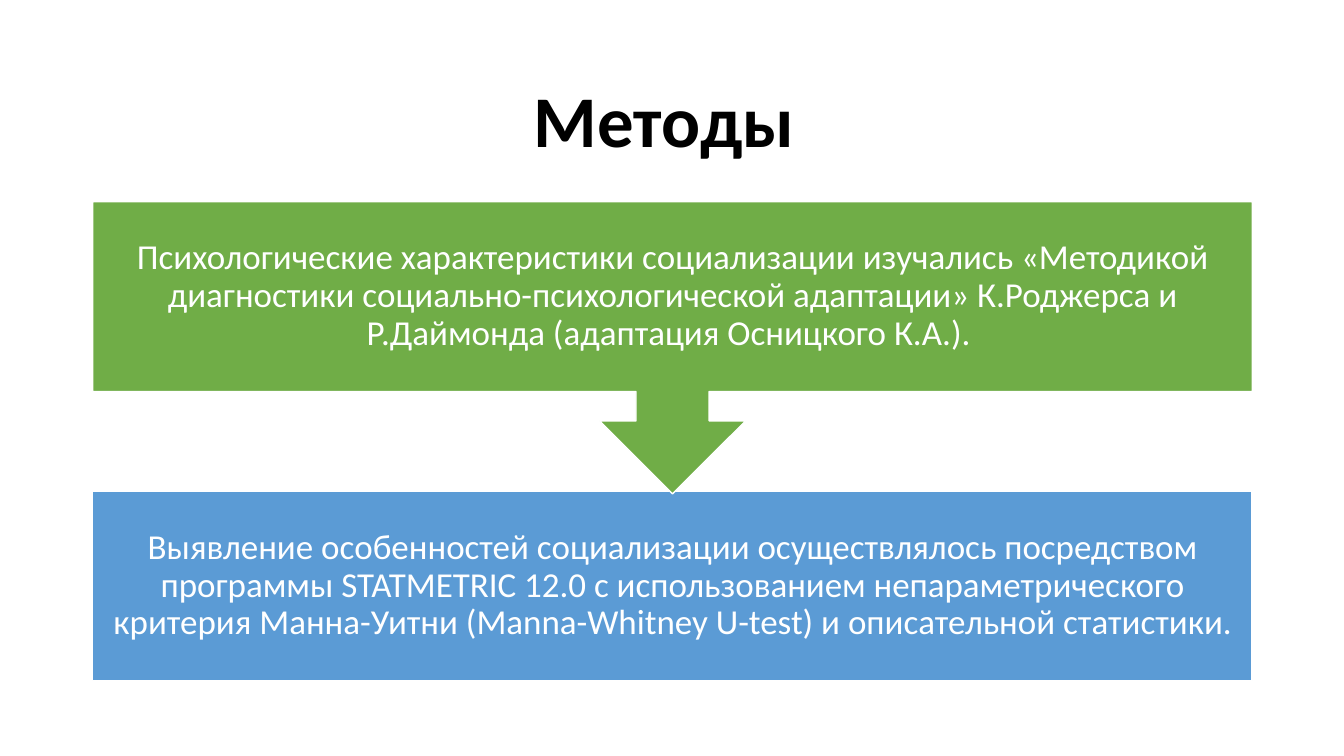
from pptx import Presentation
from pptx.dml.color import RGBColor
from pptx.enum import shapes, text
from pptx.util import Inches, Pt

WHITE = RGBColor(0xFF, 0xFF, 0xFF)
BLACK = RGBColor(0, 0, 0)
BLUE = RGBColor(0x5B, 0x9B, 0xD5)
GREEN = RGBColor(0x70, 0xAD, 0x47)

TITLE = "Методы "
STUDY = ("Психологические характеристики социализации изучались «Методикой "
         "диагностики социально-психологической адаптации» К.Роджерса и "
         "Р.Даймонда (адаптация Осницкого К.А.). ")
STATS = ("Выявление особенностей социализации осуществлялось посредством "
         "программы STATMETRIC 12.0 с использованием непараметрического "
         "критерия Манна-Уитни (Manna-Whitney U-test) и описательной статистики.")

LEFT, WIDE, TALL = 0.92, 11.5, 1.88
TOP, NEXT = 2, 4.87
ARROW = 2.9  # height of the callout with its arrow

HEAD = {"size": Pt(52), "bold": True, "name": "Calibri"}
BODY = {"size": Pt(25), "name": "Calibri"}

# text, top, height, inset, colour, font
LABELS = [
    (TITLE, 0.61, 1.24, 0.1, BLACK, HEAD),
    (STATS, NEXT, TALL, 0.19, WHITE, BODY),
    (STUDY, TOP, TALL, 0.19, WHITE, BODY),
]
# preset, top, height, turn, fill
KIND = shapes.MSO_SHAPE
BLOCKS = [
    (KIND.RECTANGLE, NEXT, TALL, 0, BLUE),
    (KIND.UP_ARROW_CALLOUT, TOP, ARROW, 180, GREEN),
]


def place(top, tall):
    return [Inches(n) for n in (LEFT, top, WIDE, tall)]


def block(slide, kind, top, tall, turn, fill):
    shape = slide.shapes.add_shape(kind, *place(top, tall))
    shape.rotation = turn
    shape.shadow.inherit = False
    shape.fill.solid()
    shape.fill.fore_color.rgb = fill
    shape.line.color.rgb = WHITE
    shape.line.width = Pt(1)


def label(slide, words, top, tall, inset, ink, font):
    frame = slide.shapes.add_textbox(*place(top, tall)).text_frame
    frame.word_wrap = True
    frame.vertical_anchor = text.MSO_ANCHOR.MIDDLE
    for side in ("left", "top", "right", "bottom"):
        setattr(frame, "margin_" + side, Inches(inset))
    para = frame.paragraphs[0]
    para.alignment = text.PP_ALIGN.CENTER
    para.line_spacing = 0.9
    run = para.add_run()
    run.text = words
    run.font.color.rgb = ink
    for key, value in font.items():
        setattr(run.font, key, value)


def main():
    deck = Presentation()
    deck.slide_width, deck.slide_height = Inches(13.33), Inches(7.5)
    slide = deck.slides.add_slide(deck.slide_layouts[6])
    for item in BLOCKS:
        block(slide, *item)
    for item in LABELS:
        label(slide, *item)
    deck.save("out.pptx")


if __name__ == "__main__":
    main()
